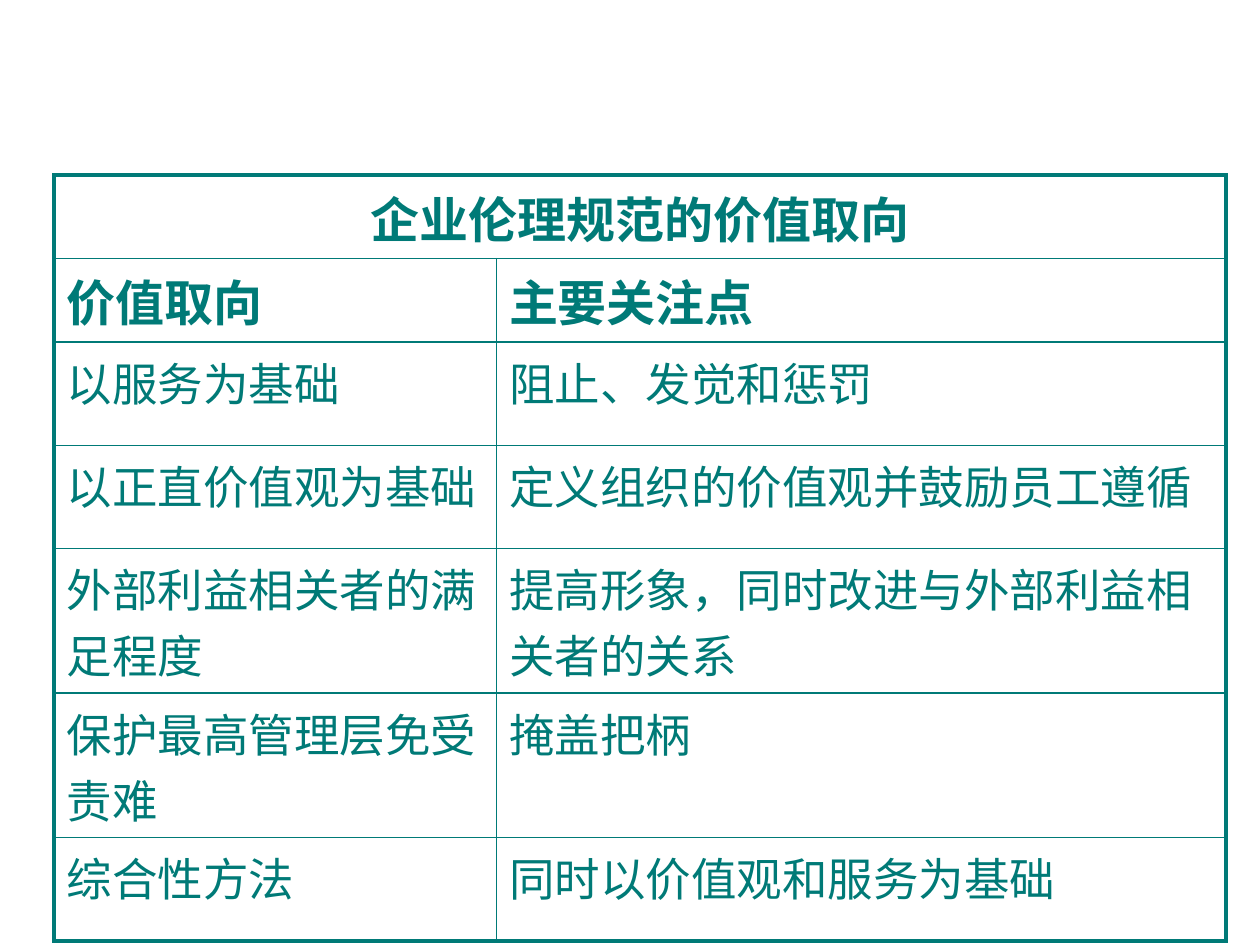
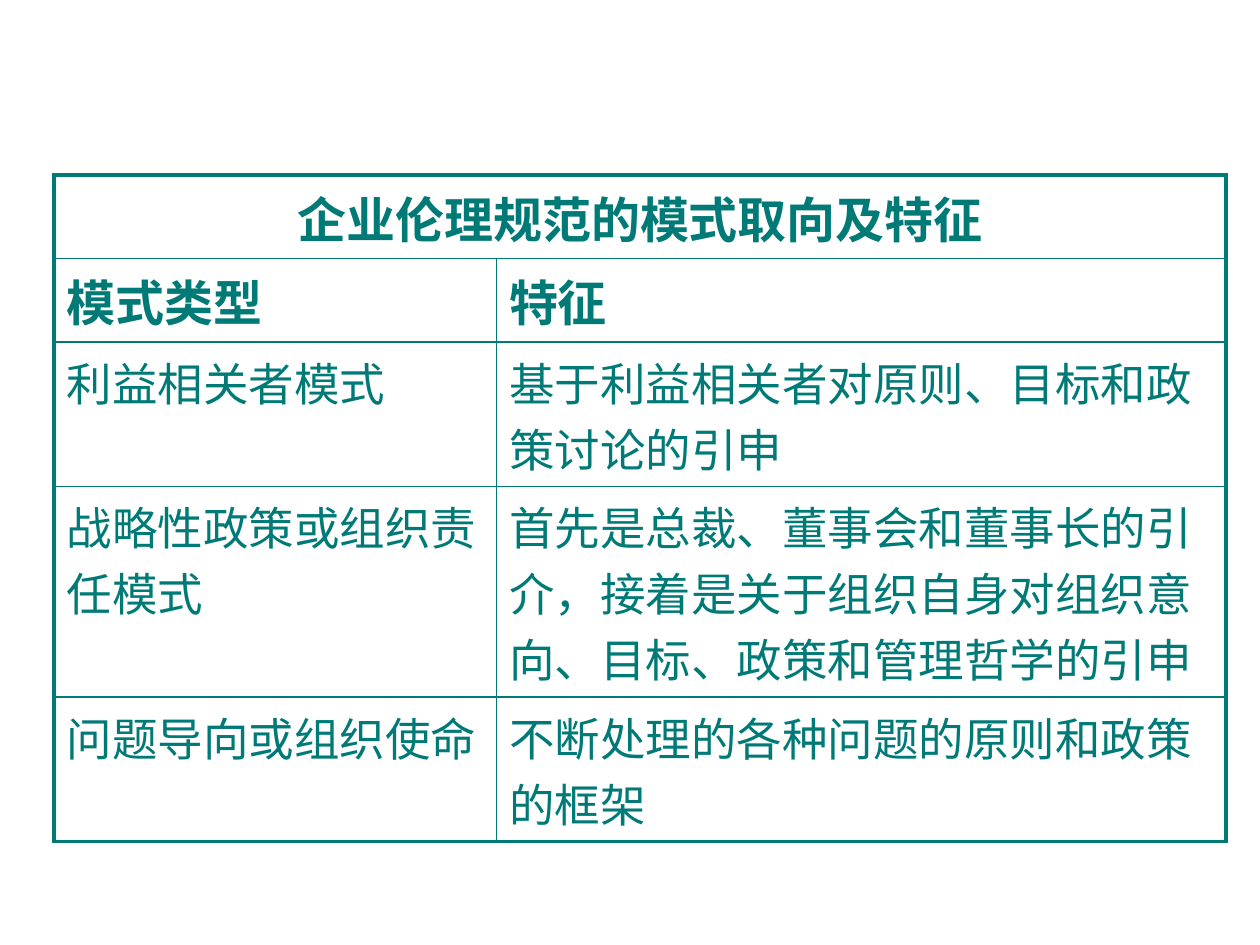
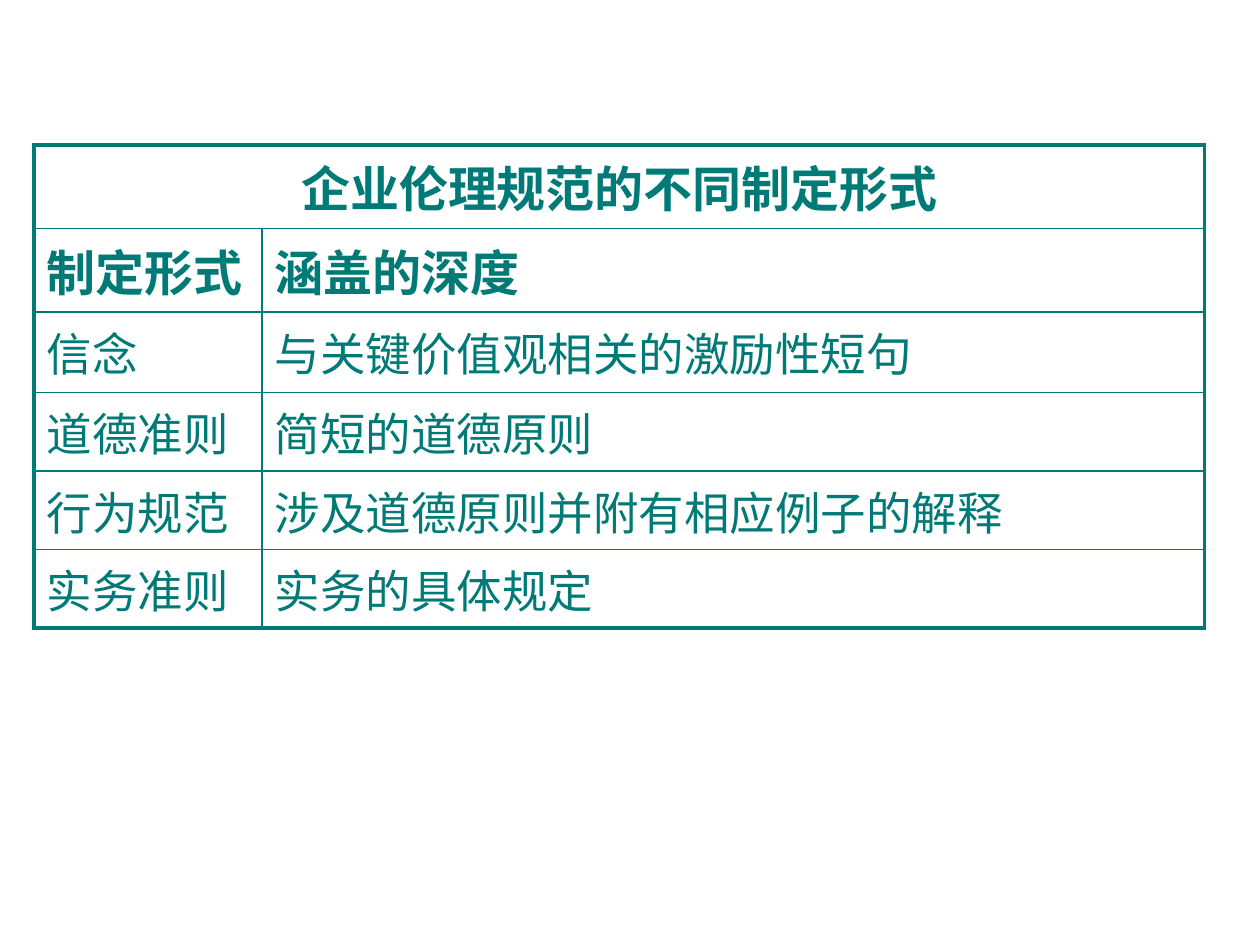
from dataclasses import dataclass

from lxml.etree import SubElement
from pptx import Presentation
from pptx.dml.color import RGBColor
from pptx.enum.text import PP_ALIGN
from pptx.oxml.ns import qn
from pptx.slide import Slide
from pptx.table import Table, _Cell
from pptx.util import Emu, Pt

# Shared style: 100 px to the inch
EMU_PER_PX = 9144
TEAL = "007A77"
FONT = "Arial"
HEADING_SIZE, BODY_SIZE = 28, 26
OUTER_LINE, INNER_LINE = 2.25, 1
HEADING_ROWS = 2
BLANK_LAYOUT = 6


@dataclass(frozen=True)
class EthicsTable:
    left: int
    top: int
    height: int
    column_widths: tuple[int, int]
    row_heights: tuple[int, ...]
    title: str
    rows: tuple[tuple[str, str], ...]


# Content of the slides
TABLES = (
    EthicsTable(
        43, 139, 566, (351, 579), (63, 63, 82, 82, 82, 82, 82),
        "企业伦理规范的价值取向",
        (
            ("价值取向", "主要关注点"),
            ("以服务为基础", "阻止、发觉和惩罚"),
            ("以正直价值观为基础", "定义组织的价值观并鼓励员工遵循"),
            ("外部利益相关者的满足程度", "提高形象，同时改进与外部利益相关者的关系"),
            ("保护最高管理层免受责难", "掩盖把柄"),
            ("综合性方法", "同时以价值观和服务为基础"),
        ),
    ),
    EthicsTable(
        43, 139, 459, (351, 579), (63, 63, 82, 82, 82),
        "企业伦理规范的模式取向及特征",
        (
            ("模式类型", "特征"),
            ("利益相关者模式", "基于利益相关者对原则、目标和政策讨论的引申"),
            (
                "战略性政策或组织责任模式",
                "首先是总裁、董事会和董事长的引介，接着是关于组织自身"
                "对组织意向、目标、政策和管理哲学的引申",
            ),
            ("问题导向或组织使命", "不断处理的各种问题的原则和政策的框架"),
        ),
    ),
    EthicsTable(
        27, 115, 350, (181, 748), (63, 63, 64, 31, 20, 50),
        "企业伦理规范的不同制定形式",
        (
            ("制定形式", "涵盖的深度"),
            ("信念", "与关键价值观相关的激励性短句"),
            ("道德准则", "简短的道德原则"),
            ("行为规范", "涉及道德原则并附有相应例子的解释"),
            ("实务准则", "实务的具体规定"),
        ),
    ),
)


def px(length: int) -> Emu:
    return Emu(length * EMU_PER_PX)


def color(value: str) -> RGBColor:
    return RGBColor.from_string(value)


def write_cell(cell: _Cell, text: str, heading: bool) -> None:
    cell.text_frame.text = text
    for span in cell.text_frame.paragraphs[0].runs:
        span.font.name = FONT
        span.font.size = Pt(HEADING_SIZE if heading else BODY_SIZE)
        span.font.bold = heading
        span.font.color.rgb = color(TEAL)


def draw_borders(table: Table) -> None:
    """Thick lines around the table, thin lines inside it."""
    last_row, last_column = len(table.rows) - 1, len(table.columns) - 1
    for row in range(last_row + 1):
        for column in range(last_column + 1):
            cell = table.cell(row, column)
            properties = cell._tc.get_or_add_tcPr()
            outer_sides = {
                "a:lnL": column == 0,
                "a:lnR": column == last_column or row == 0,
                "a:lnT": row == 0,
                "a:lnB": row == last_row,
            }
            for side, outer in outer_sides.items():
                width = Pt(OUTER_LINE if outer else INNER_LINE)
                line = SubElement(properties, qn(side), w=str(int(width)))
                fill = SubElement(line, qn("a:solidFill"))
                SubElement(fill, qn("a:srgbClr"), val=TEAL)
            cell.fill.background()


def add_ethics_table(page: Slide, content: EthicsTable) -> None:
    frame = page.shapes.add_table(
        len(content.row_heights), len(content.column_widths),
        px(content.left), px(content.top),
        px(sum(content.column_widths)), px(content.height),
    )
    table = frame.table
    table.first_row = table.horz_banding = False
    for column, width in zip(table.columns, content.column_widths):
        column.width = px(width)
    for row, height in zip(table.rows, content.row_heights):
        row.height = px(height)
    frame.height = px(content.height)

    # Title across both columns
    title = table.cell(0, 0)
    title.merge(table.cell(0, 1))
    write_cell(title, content.title, heading=True)
    title.text_frame.paragraphs[0].alignment = PP_ALIGN.CENTER

    # Column headings and body
    for row_index, texts in enumerate(content.rows, start=1):
        for column_index, text in enumerate(texts):
            cell = table.cell(row_index, column_index)
            write_cell(cell, text, heading=row_index < HEADING_ROWS)
    draw_borders(table)


def main() -> None:
    deck = Presentation()
    deck.slide_width, deck.slide_height = px(1000), px(750)
    for content in TABLES:
        page = deck.slides.add_slide(deck.slide_layouts[BLANK_LAYOUT])
        add_ethics_table(page, content)
    deck.save("out.pptx")


if __name__ == "__main__":
    main()
